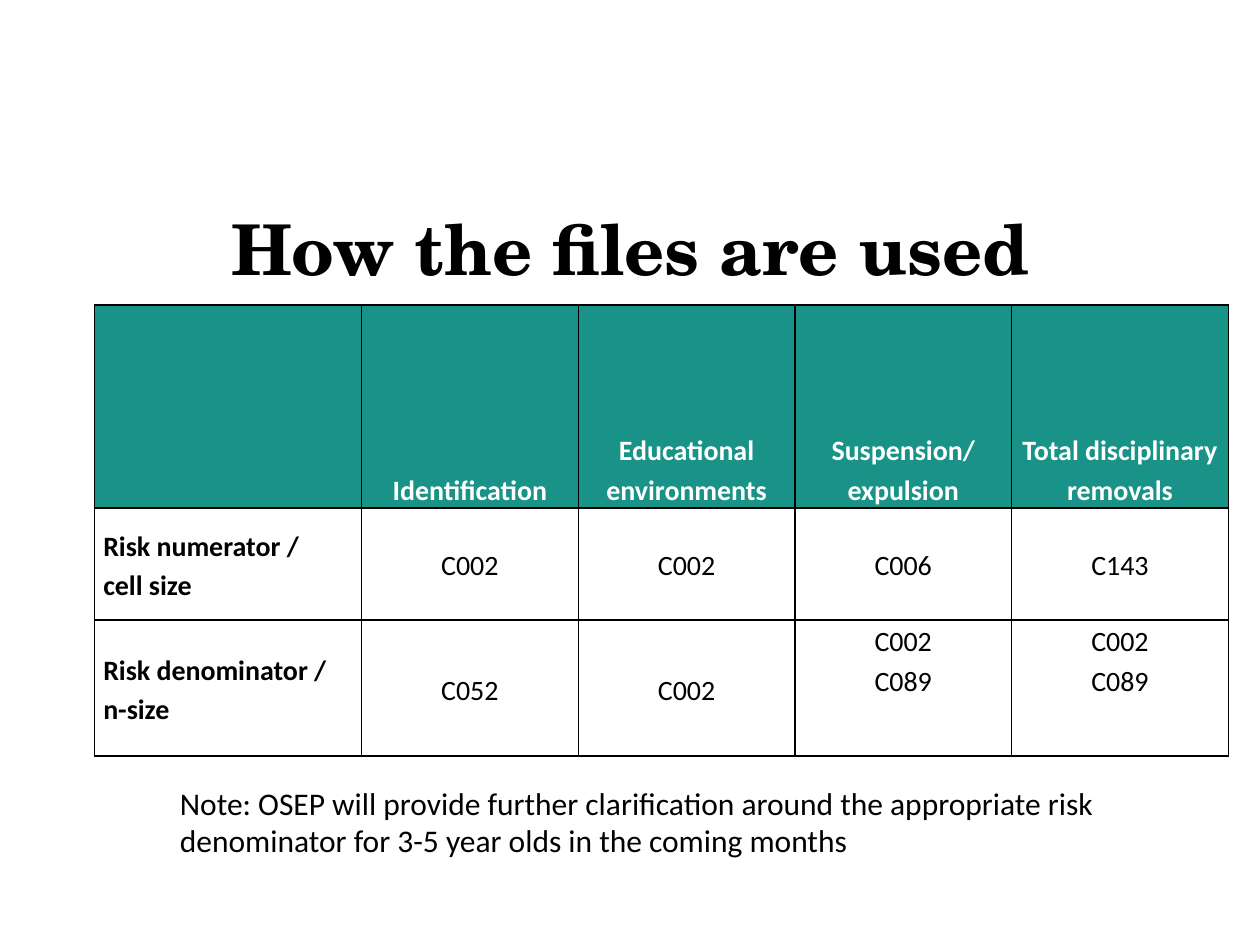
import pptx
import pptx.dml.color
import pptx.enum.text
import pptx.util
from lxml import etree
from pptx.oxml.ns import qn

RGBColor = pptx.dml.color.RGBColor
ALIGN = pptx.enum.text.PP_ALIGN
ANCHOR = pptx.enum.text.MSO_ANCHOR
Inches = pptx.util.Inches
Pt = pptx.util.Pt

BLACK = RGBColor(0, 0, 0)
WHITE = RGBColor(255, 255, 255)
TEAL = RGBColor(0x19, 0x93, 0x87)

COLUMN_WIDTHS = [2.12] + [1.72] * 4
ROW_HEIGHTS = [1.61, 0.89, 1.08]
ROWS = [
    ["", "Identification", "Educational environments",
     "Suspension/\nexpulsion", "Total disciplinary removals"],
    ["Risk numerator /\ncell size", "C002", "C002", "C006", "C143"],
    ["Risk denominator / n-size", "C052", "C002", "C002\nC089", "C002\nC089"],
]
NOTE = ("Note: OSEP will provide further clarification around the appropriate "
        "risk denominator for 3-5 year olds in the coming months")


def format_text(frame, size, name="Calibri", color=BLACK, bold=False,
                align=ALIGN.LEFT, spacing=None):
    for para in frame.paragraphs:
        para.alignment = align
        para.line_spacing = spacing
        for span in para.runs:
            span.font.size = Pt(size)
            span.font.name = name
            span.font.bold = bold
            span.font.color.rgb = color


def add_borders(cell):
    properties = cell._tc.get_or_add_tcPr()
    # Border lines come before the fill in a cell's properties
    for index, side in enumerate(("a:lnL", "a:lnR", "a:lnT", "a:lnB")):
        line = etree.Element(qn(side), w=str(Pt(1)))
        fill = etree.SubElement(line, qn("a:solidFill"))
        etree.SubElement(fill, qn("a:srgbClr"), val=str(BLACK))
        properties.insert(index, line)


def format_cell(cell, text, is_header, is_label):
    cell.text_frame.text = text
    cell.margin_left = cell.margin_right = Inches(0.07)
    cell.margin_top = cell.margin_bottom = 0
    if is_header:
        cell.fill.solid()
        cell.fill.fore_color.rgb = TEAL
        cell.vertical_anchor = ANCHOR.BOTTOM
    else:
        cell.fill.background()
        stacked = "\n" in text and not is_label
        cell.vertical_anchor = ANCHOR.TOP if stacked else ANCHOR.MIDDLE
    format_text(cell.text_frame, 16, color=WHITE if is_header else BLACK,
                bold=is_header or is_label,
                align=ALIGN.LEFT if is_label else ALIGN.CENTER, spacing=1.15)
    add_borders(cell)


def add_title(page, text):
    title = page.shapes.title
    title.left, title.top = Inches(0.5), Inches(1.58)
    title.width, title.height = Inches(9), Inches(1.25)
    title.text_frame.text = text
    title.text_frame.vertical_anchor = ANCHOR.TOP
    format_text(title.text_frame, 40, "TeX Gyre Schola", bold=True,
                align=ALIGN.CENTER)


def add_file_table(page):
    table = page.shapes.add_table(
        len(ROWS), len(COLUMN_WIDTHS), Inches(0.75), Inches(2.42),
        Inches(sum(COLUMN_WIDTHS)), Inches(sum(ROW_HEIGHTS))).table
    table.horz_banding = False
    for column, width in zip(table.columns, COLUMN_WIDTHS):
        column.width = Inches(width)
    for row, height in zip(table.rows, ROW_HEIGHTS):
        row.height = Inches(height)
    for r, texts in enumerate(ROWS):
        for c, text in enumerate(texts):
            format_cell(table.cell(r, c), text, r == 0, c == 0)


def add_note(page, text):
    box = page.shapes.add_textbox(Inches(1.33), Inches(6.17),
                                  Inches(7.5), Inches(0.71))
    box.text_frame.word_wrap = True
    box.text_frame.auto_size = pptx.enum.text.MSO_AUTO_SIZE.SHAPE_TO_FIT_TEXT
    box.text_frame.text = text
    format_text(box.text_frame, 18)


def main():
    deck = pptx.Presentation()
    deck.slide_width, deck.slide_height = Inches(10), Inches(7.5)
    page = deck.slides.add_slide(deck.slide_layouts[5])
    page.background.fill.solid()
    page.background.fill.fore_color.rgb = WHITE

    add_title(page, "How the files are used")
    add_file_table(page)
    add_note(page, NOTE)
    deck.save("out.pptx")


if __name__ == "__main__":
    main()
